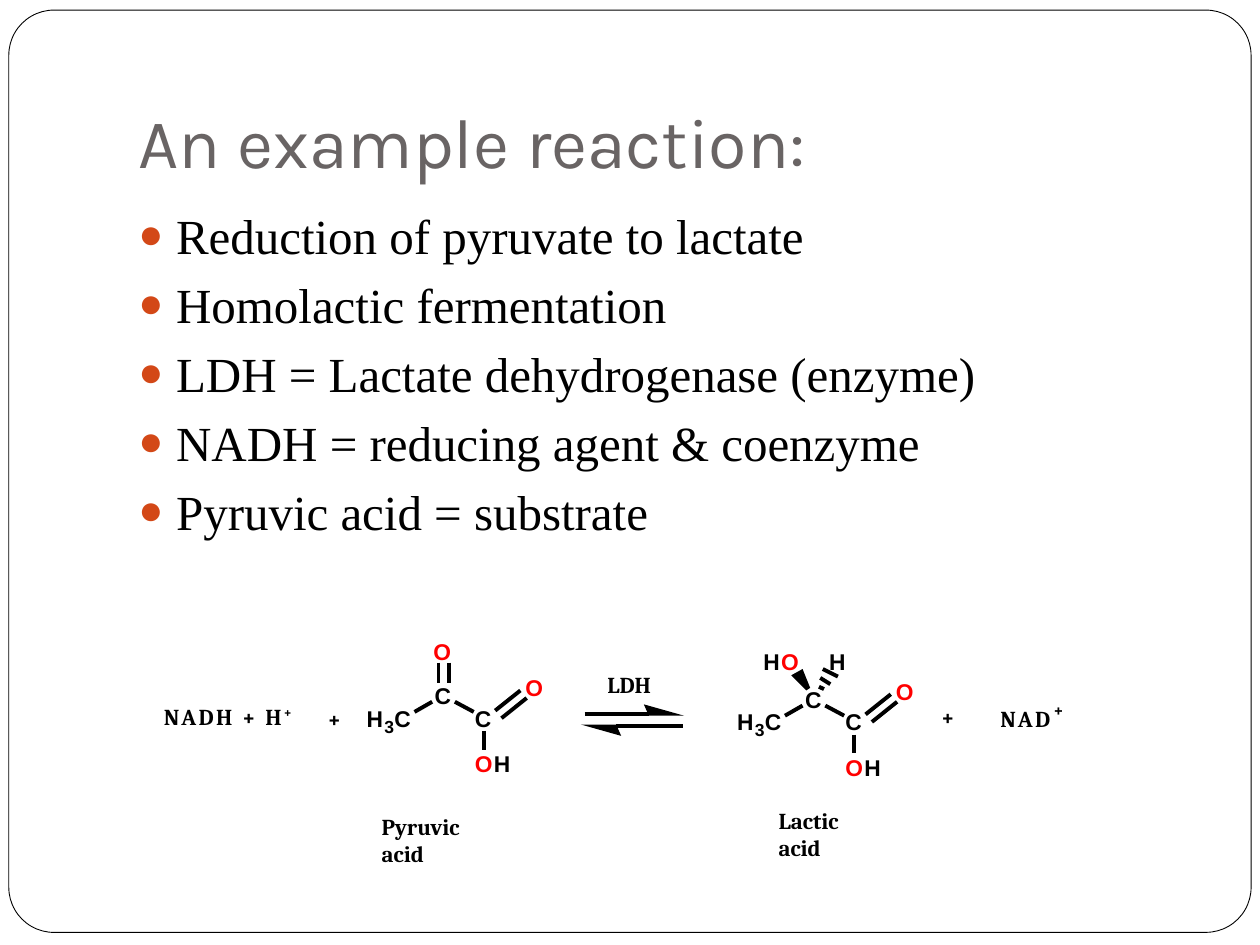
from lxml import etree
from pptx import Presentation
from pptx.dml.color import RGBColor
from pptx.enum.shapes import MSO_CONNECTOR, MSO_SHAPE
from pptx.enum.text import MSO_ANCHOR, PP_ALIGN
from pptx.oxml.ns import qn
from pptx.util import Inches, Pt

STRAIGHT = MSO_CONNECTOR.STRAIGHT
ROUNDED = MSO_SHAPE.ROUNDED_RECTANGLE
BOTTOM = MSO_ANCHOR.BOTTOM
LEFT = PP_ALIGN.LEFT
COLOURS = {"ink": "000000", "paper": "FFFFFF", "title": "696464",
           "bullet": "D34817", "oxygen": "FF0000"}
LABEL_HEIGHT = 0.22
LABEL_SIZE = 13
BOND_WIDTH = 2.25

TITLE = "An example reaction:"
POINTS = [
    "Reduction of pyruvate to lactate",
    "Homolactic fermentation",
    "LDH = Lactate dehydrogenase (enzyme)",
    "NADH = reducing agent & coenzyme",
    "Pyruvic acid = substrate",
]

# The part both acids share, placed for pyruvic acid; lactic acid is shifted
ACID_SHIFTS = [(0, 0), (2.94, 0.03)]
ACID_ATOMS = [("H", 2.91, 5.59), ("3", 3.05, 5.68), ("C", 3.13, 5.59),
              ("C", 3.45, 5.41), ("C", 3.77, 5.59), ("O", 4.17, 5.35),
              ("O", 3.77, 5.95), ("H", 3.92, 5.95)]
ACID_BONDS = [(3.29, 5.65, 3.43, 5.57), (3.61, 5.57, 3.76, 5.65),
              (3.93, 5.64, 4.13, 5.48), (3.98, 5.70, 4.18, 5.54),
              (3.84, 5.80, 3.84, 5.95)]

KETONE_ATOMS = [("O", 3.44, 5.06)]
KETONE_BONDS = [(3.48, 5.26, 3.48, 5.42), (3.56, 5.26, 3.56, 5.42)]
ALCOHOL_ATOMS = [("H", 6.06, 5.14), ("O", 6.20, 5.14), ("H", 6.58, 5.14)]
HASHED_BOND = [(6.50, 5.45, 6.54, 5.47), (6.51, 5.38, 6.59, 5.43),
               (6.53, 5.31, 6.65, 5.37)]
SOLID_WEDGE = [(6.43, 5.46), (6.40, 5.48), (6.28, 5.36), (6.37, 5.31)]

ARROW_SHAFTS = [(4.64, 5.67, 5.15, 5.67), (4.89, 5.76, 5.42, 5.76)]
ARROW_HEADS = [[(5.43, 5.68), (5.15, 5.68), (5.11, 5.59)],
               [(4.61, 5.75), (4.89, 5.75), (4.93, 5.84)]]

# text, left, top, width, size, letter spacing in points
REACTION_LABELS = [
    ("NADH + H", 1.30, 5.58, 1.10, LABEL_SIZE, 1.4),
    ("+", 2.25, 5.58, 0.08, 8, 0),
    ("+", 2.60, 5.59, 0.10, LABEL_SIZE, 0),
    ("LDH", 4.82, 5.32, 0.39, LABEL_SIZE, 0),
    ("+", 7.47, 5.58, 0.10, LABEL_SIZE, 0),
    ("NAD", 7.94, 5.59, 0.43, LABEL_SIZE, 1.4),
    ("+", 8.36, 5.55, 0.08, 10, 0),
]
ACID_NAMES = [("Pyruvic acid", 3.03, 6.45, 0.8), ("Lactic acid", 6.18, 6.40, 0.7)]


def rgb(name):
    return RGBColor.from_string(COLOURS[name])


def set_font(para, name, size, colour, bold=False):
    para.font.name = name
    para.font.size = Pt(size)
    para.font.bold = bold
    para.font.color.rgb = rgb(colour)


def add_label(slide, text, left, top, width, size=LABEL_SIZE, spacing=0,
              font="Cambria", colour="ink", wrap=False):
    box = slide.shapes.add_textbox(Inches(left), Inches(top), Inches(width),
                                   Inches(LABEL_HEIGHT))
    frame = box.text_frame
    frame.margin_left = frame.margin_right = 0
    frame.margin_top = frame.margin_bottom = 0
    frame.word_wrap = wrap
    para = frame.paragraphs[0]
    span = para.add_run()
    span.text = text
    set_font(para, font, size, colour, bold=True)
    if spacing:
        span.font.size = Pt(size)
        box.element.find(".//" + qn("a:rPr")).set("spc", str(round(spacing * 100)))


def add_atom(slide, symbol, left, top):
    width, size = (0.08, 10) if symbol.isdigit() else (0.14, LABEL_SIZE)
    colour = "oxygen" if symbol == "O" else "ink"
    add_label(slide, symbol, left, top, width, size, font="Arial", colour=colour)


def add_bond(slide, x1, y1, x2, y2):
    bond = slide.shapes.add_connector(STRAIGHT, Inches(x1), Inches(y1),
                                      Inches(x2), Inches(y2))
    bond.line.color.rgb = rgb("ink")
    bond.line.width = Pt(BOND_WIDTH)
    etree.SubElement(bond.element.spPr, qn("a:effectLst"))


def add_solid(slide, corners):
    """Draw a filled polygon through the corners, given in inches."""
    points = [(Inches(x), Inches(y)) for x, y in corners]
    builder = slide.shapes.build_freeform(*points[0])
    builder.add_line_segments(points[1:], close=True)
    solid = builder.convert_to_shape()
    solid.shadow.inherit = False
    solid.fill.solid()
    solid.fill.fore_color.rgb = rgb("ink")
    solid.line.fill.background()


def add_title(slide):
    title = slide.shapes.title
    title.left, title.top = Inches(1), Inches(0.3)
    title.width, title.height = Inches(8.5), Inches(1.25)
    frame = title.text_frame
    frame.text = TITLE
    frame.vertical_anchor = BOTTOM
    frame.margin_bottom = Inches(0.1)
    frame.paragraphs[0].alignment = LEFT
    set_font(frame.paragraphs[0], "Karla", 40, "title")


def add_border(slide):
    """Draw the rounded page border behind the title."""
    border = slide.shapes.add_shape(ROUNDED, Inches(0.07), Inches(0.08),
                                    Inches(9.86), Inches(7.32))
    border.adjustments[0] = 0.049
    border.shadow.inherit = False
    border.fill.solid()
    border.fill.fore_color.rgb = rgb("paper")
    border.line.color.rgb = rgb("ink")
    border.line.width = Pt(0.5)
    slide.shapes.title.element.addprevious(border.element)


def add_points(slide):
    box = slide.shapes.add_textbox(Inches(1), Inches(1.58), Inches(8.5), Inches(5))
    frame = box.text_frame
    frame.word_wrap = True
    for index, point in enumerate(POINTS):
        para = frame.add_paragraph() if index else frame.paragraphs[0]
        para.text = point
        para.space_before = Pt(5.8)
        set_font(para, "Times New Roman", 28, "ink")
    for properties in box.element.iter(qn("a:pPr")):
        properties.set("marL", str(Inches(0.3)))
        properties.set("indent", str(-Inches(0.3)))
        colour = etree.Element(qn("a:buClr"))
        etree.SubElement(colour, qn("a:srgbClr"), val=COLOURS["bullet"])
        defaults = properties.find(qn("a:defRPr"))
        for part in (colour,
                     etree.Element(qn("a:buSzPct"), val="85000"),
                     etree.Element(qn("a:buFont"), typeface="Arial"),
                     etree.Element(qn("a:buChar"), char="●")):
            defaults.addprevious(part)


def add_reaction(slide):
    bonds = KETONE_BONDS + HASHED_BOND + ARROW_SHAFTS
    atoms = KETONE_ATOMS + ALCOHOL_ATOMS
    for dx, dy in ACID_SHIFTS:
        bonds += [(x1 + dx, y1 + dy, x2 + dx, y2 + dy)
                  for x1, y1, x2, y2 in ACID_BONDS]
        atoms += [(symbol, x + dx, y + dy) for symbol, x, y in ACID_ATOMS]
    for corners in [SOLID_WEDGE] + ARROW_HEADS:
        add_solid(slide, corners)
    for bond in bonds:
        add_bond(slide, *bond)
    for atom in atoms:
        add_atom(slide, *atom)
    for label in REACTION_LABELS:
        add_label(slide, *label)
    for name in ACID_NAMES:
        add_label(slide, *name, wrap=True)


def main():
    deck = Presentation()
    deck.slide_width, deck.slide_height = Inches(10), Inches(7.5)
    slide = deck.slides.add_slide(deck.slide_layouts[5])
    add_title(slide)
    add_border(slide)
    add_points(slide)
    add_reaction(slide)
    deck.save("out.pptx")


if __name__ == "__main__":
    main()
